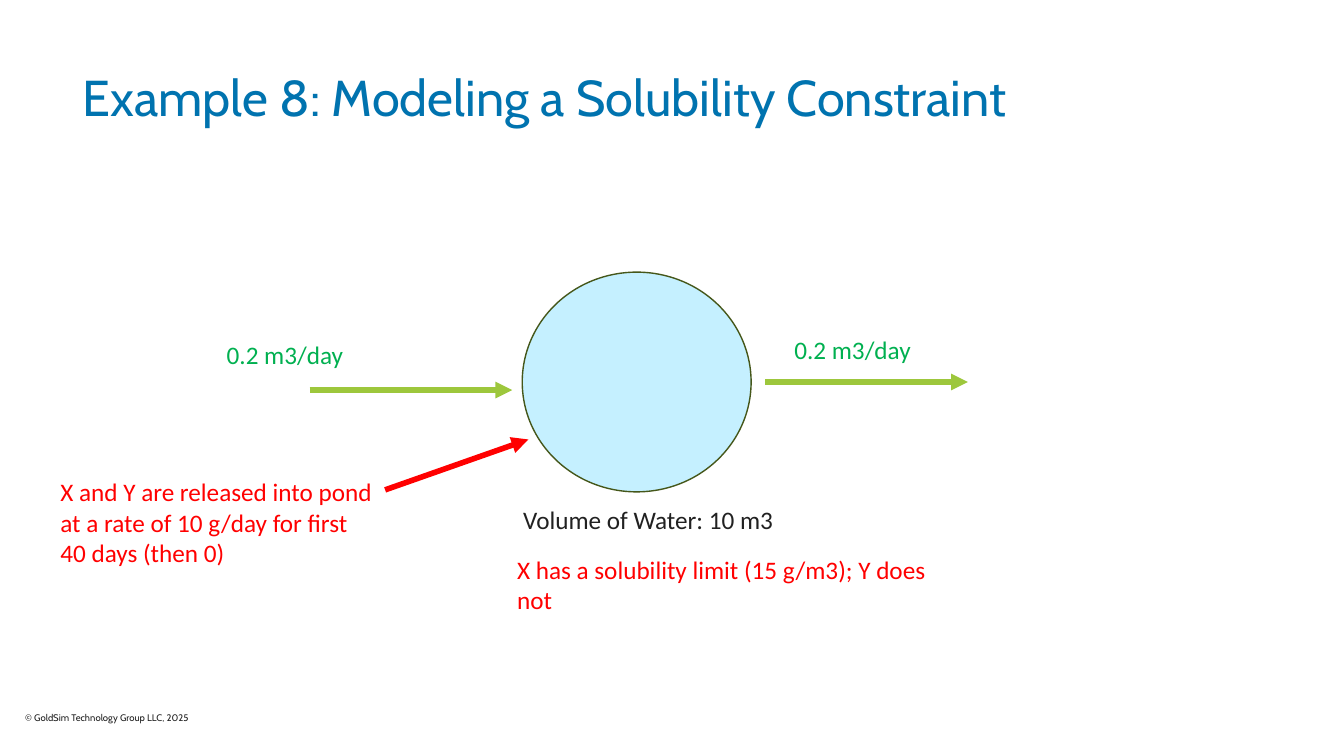
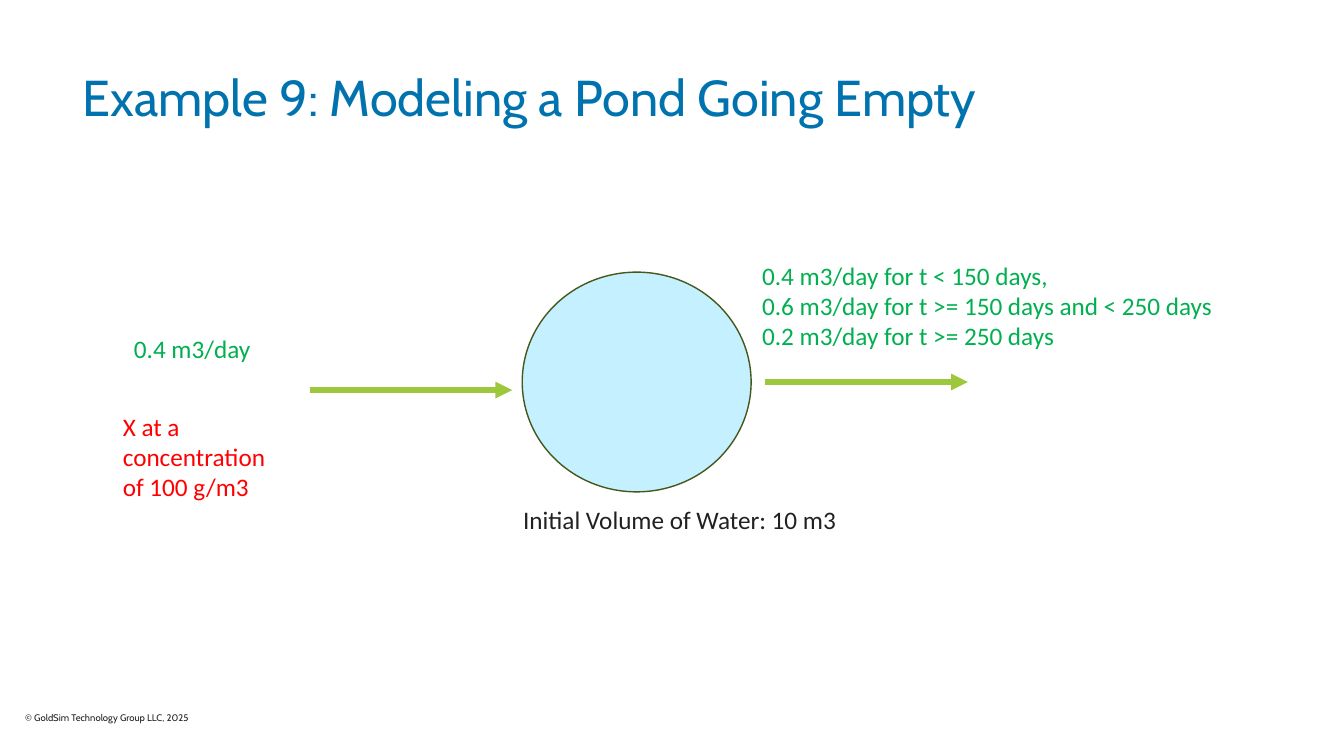
from lxml import etree
from pptx import Presentation
from pptx.dml.color import RGBColor
from pptx.enum.shapes import MSO_CONNECTOR, MSO_SHAPE
from pptx.enum.text import MSO_ANCHOR
from pptx.oxml.ns import qn
from pptx.util import Inches, Pt

STRAIGHT = MSO_CONNECTOR.STRAIGHT
POND_SHAPE = MSO_SHAPE.FLOWCHART_CONNECTOR
MIDDLE, TOP = MSO_ANCHOR.MIDDLE, MSO_ANCHOR.TOP

BLUE, INK, GREEN, RED = "0073AF", "212121", "00B050", "FF0000"
WATER, POND_EDGE, FLOW = "C5F0FF", "45571A", "9DC73C"
HEAD_FONT, BODY_FONT = "Cabin", "Calibri"

FOOTER = "© GoldSim Technology Group LLC, 2025"
POND = (5.18, 2.7, 2.27, 2.18)
FLOW_LENGTH = 2.01
FLOW_STARTS = [(3.07, 3.87), (7.59, 3.79)]

# Labels: lines, (left, top, width, height), colour, wrap
# Releases: start, end
SLIDES = [
    {
        "title": "Example 8: Modeling a Solubility Constraint",
        "labels": [
            (["0.2 m3/day"], (2.15, 3.32, 1.37, 0.4), GREEN, False),
            (["0.2 m3/day"], (7.78, 3.27, 1.37, 0.4), GREEN, False),
            (["Volume of Water: 10 m3"], (5.09, 4.95, 5.94, 0.4), INK, True),
            (["X has a solubility limit (15 g/m3); Y does not"],
             (5.03, 5.45, 4.28, 0.71), RED, True),
            (["X and Y are released into pond at a rate of 10 g/day "
              "for first 40 days (then 0)"],
             (0.5, 4.68, 3.32, 1.01), RED, True),
        ],
        "releases": [((3.82, 4.86), (5.24, 4.36))],
    },
    {
        "title": "Example 9: Modeling a Pond Going Empty",
        "labels": [
            (["0.4 m3/day"], (1.23, 3.26, 1.37, 0.4), GREEN, False),
            (["0.4 m3/day for t < 150 days,",
              "0.6 m3/day for t >= 150 days and < 250 days",
              "0.2 m3/day for t >= 250 days"],
             (7.46, 2.53, 5.19, 1.01), GREEN, True),
            (["Initial Volume of Water: 10 m3"],
             (5.09, 4.95, 3.57, 0.4), INK, True),
            (["X at a concentration of 100 g/m3"],
             (1.12, 4.03, 1.87, 1.01), RED, True),
        ],
        "releases": [],
    },
]


def rgb(value):
    return RGBColor.from_string(value)


def add_text(s, lines, box, color, size=18, font=BODY_FONT, wrap=True,
             anchor=TOP, inset=True, spacing=None):
    tf = s.shapes.add_textbox(*map(Inches, box)).text_frame
    tf.word_wrap = wrap
    tf.vertical_anchor = anchor
    if not inset:
        tf.margin_left = tf.margin_right = tf.margin_top = tf.margin_bottom = 0
    for i, line in enumerate(lines):
        p = tf.add_paragraph() if i else tf.paragraphs[0]
        p.text = line
        p.line_spacing = spacing
        p.font.name, p.font.size = font, Pt(size)
        p.font.color.rgb = rgb(color)


def add_arrow(s, start, end, color):
    arrow = s.shapes.add_connector(STRAIGHT, *map(Inches, start + end))
    arrow.line.color.rgb = rgb(color)
    arrow.line.width = Pt(4)
    etree.SubElement(arrow.line._get_or_add_ln(), qn("a:tailEnd"), type="triangle")
    etree.SubElement(arrow._element.spPr, qn("a:effectLst"))


def add_pond(s):
    sp = s.shapes.add_shape(POND_SHAPE, *map(Inches, POND))
    sp.shadow.inherit = False
    sp.fill.solid()
    sp.fill.fore_color.rgb = rgb(WATER)
    sp.line.color.rgb = rgb(POND_EDGE)
    sp.line.width = Pt(1)


def add_frame(s, title):
    """Add the title and footer that every slide carries."""
    add_text(s, [title], (0.82, 0.72, 10.54, 0.54), BLUE, 36, HEAD_FONT,
             anchor=MIDDLE, inset=False, spacing=0.9)
    add_text(s, [FOOTER], (0.25, 6.92, 4.5, 0.4), INK, 6.8, HEAD_FONT,
             anchor=MIDDLE, inset=False)


def main():
    prs = Presentation()
    prs.slide_width, prs.slide_height = Inches(13.33), Inches(7.5)
    for content in SLIDES:
        s = prs.slides.add_slide(prs.slide_layouts[6])
        add_frame(s, content["title"])
        add_pond(s)
        for x, y in FLOW_STARTS:
            add_arrow(s, (x, y), (x + FLOW_LENGTH, y), FLOW)
        for lines, box, color, wrap in content["labels"]:
            add_text(s, lines, box, color, wrap=wrap)
        for start, end in content["releases"]:
            add_arrow(s, start, end, RED)
    prs.save("out.pptx")


if __name__ == "__main__":
    main()
